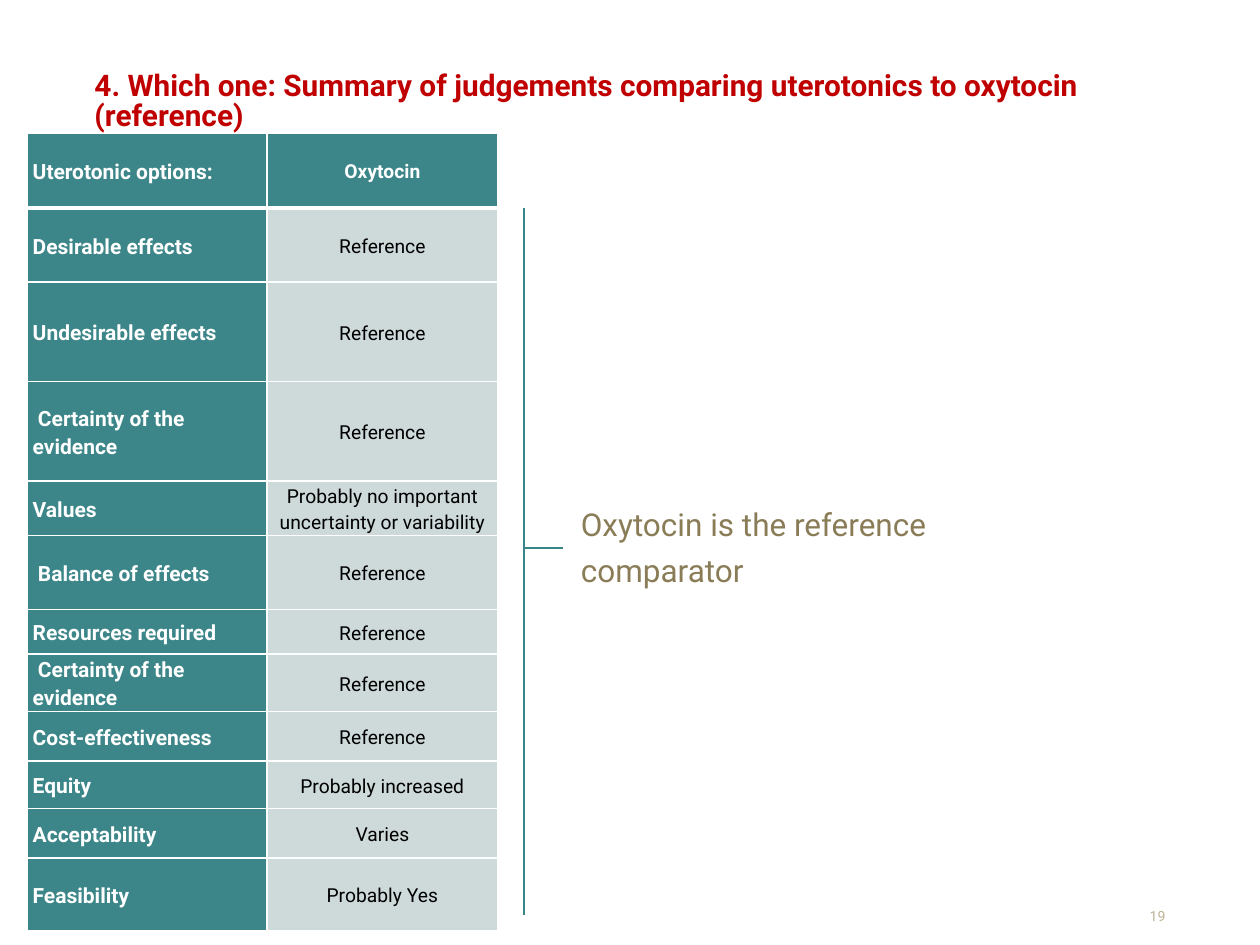
import pptx
import pptx.dml.color
import pptx.enum.shapes
import pptx.enum.text
import pptx.oxml
import pptx.oxml.ns
import pptx.util

Inches = pptx.util.Inches
Pt = pptx.util.Pt
ALIGN = pptx.enum.text.PP_ALIGN
ANCHOR = pptx.enum.text.MSO_ANCHOR

HUES = {
    "teal": "3C8689",
    "line": "398588",
    "pale": "CED9DA",
    "white": "FFFFFF",
    "black": "000000",
    "red": "C00000",
    "olive": "897C57",
    "sand": "BCB296",
}

ROWS = [
    (0.59, "Uterotonic options:", "Oxytocin"),
    (0.59, "Desirable effects", "Reference"),
    (0.79, "Undesirable effects", "Reference"),
    (0.79, " Certainty of the evidence", "Reference"),
    (0.43, "Values", "Probably no important uncertainty or variability"),
    (0.59, " Balance of effects", "Reference"),
    (0.35, "Resources required", "Reference"),
    (0.35, " Certainty of the evidence", "Reference"),
    (0.39, "Cost-effectiveness", "Reference"),
    (0.38, "Equity", "Probably increased"),
    (0.39, "Acceptability", "Varies"),
    (0.58, "Feasibility", "Probably Yes"),
]
COLS = [1.9, 1.83]


def hue(name):
    return pptx.dml.color.RGBColor.from_string(HUES[name])


def apply(item, style):
    for key, value in style.items():
        setattr(item, key, value)


def write(frame, text, size, color, bold=False, **style):
    para = frame.paragraphs[0]
    apply(para, style)
    run = para.add_run()
    run.text = text
    apply(run.font, {"name": "Roboto", "size": Pt(size), "bold": bold})
    run.font.color.rgb = hue(color)


def label(slide, box, text, size, color, anchor=ANCHOR.TOP, **style):
    frame = slide.shapes.add_textbox(*map(Inches, box)).text_frame
    apply(frame, {
        "word_wrap": True, "vertical_anchor": anchor,
        "margin_left": 0, "margin_right": 0, "margin_top": 0, "margin_bottom": 0,
    })
    write(frame, text, size, color, **style)


def edge(cell, sides):
    props = cell._tc.get_or_add_tcPr()
    for side, width in sides.items():
        props.append(pptx.oxml.parse_xml(
            f'<a:ln{side} {pptx.oxml.ns.nsdecls("a")} w="{Pt(width)}">'
            f'<a:solidFill><a:srgbClr val="{HUES["white"]}"/></a:solidFill>'
            f'</a:ln{side}>'))


def grid(slide, box):
    table = slide.shapes.add_table(len(ROWS), len(COLS), *map(Inches, box)).table
    for col, width in zip(table.columns, COLS):
        col.width = Inches(width)
    for i, (height, *texts) in enumerate(ROWS):
        table.rows[i].height = Inches(height)
        for j, text in enumerate(texts):
            cell = table.cell(i, j)
            head = i == 0 or j == 0
            edge(cell, {"L": 1, "R": 1, "T": 3 if i == 1 else 1, "B": 3 if i == 0 else 1})
            apply(cell, {
                "vertical_anchor": ANCHOR.MIDDLE,
                "margin_left": Inches(0.04), "margin_right": Inches(0.04),
                "margin_top": 0, "margin_bottom": 0,
            })
            cell.fill.solid()
            cell.fill.fore_color.rgb = hue("teal" if head else "pale")
            write(cell.text_frame, text, 11 if j else 12, "white" if head else "black",
                  bold=head, line_spacing=1.15, alignment=ALIGN.CENTER if j else ALIGN.LEFT)


def rule(slide, *ends):
    line = slide.shapes.add_connector(
        pptx.enum.shapes.MSO_CONNECTOR.STRAIGHT, *map(Inches, ends))
    line.line.color.rgb = hue("line")
    line.line.width = Pt(0.75)
    line._element.spPr.append(
        pptx.oxml.parse_xml(f'<a:effectLst {pptx.oxml.ns.nsdecls("a")}/>'))


def note(slide, box):
    left, top, width, height = box
    mid = top + 2.7
    rule(slide, left, top, left, top + height)
    rule(slide, left, mid, left + 0.31, mid)
    label(slide, (left + 0.45, mid - 0.4, width - 0.45, 0.69),
          "Oxytocin is the reference comparator", 18, "olive", line_spacing=1.2)


def main():
    deck = pptx.Presentation()
    apply(deck, {"slide_width": Inches(10), "slide_height": Inches(7.5)})
    slide = deck.slides.add_slide(deck.slide_layouts[6])
    label(slide, (8.93, 7.21, 0.32, 0.13), "19", 8, "sand",
          anchor=ANCHOR.BOTTOM, alignment=ALIGN.RIGHT)
    grid(slide, (0.22, 1.06, sum(COLS), sum(row[0] for row in ROWS)))
    label(slide, (0.75, 0.57, 8.5, 0.49),
          "4. Which one: Summary of judgements comparing uterotonics to oxytocin (reference)",
          17, "red", bold=True, line_spacing=0.85)
    note(slide, (4.16, 1.65, 4.06, 5.61))
    deck.save("out.pptx")


if __name__ == "__main__":
    main()
